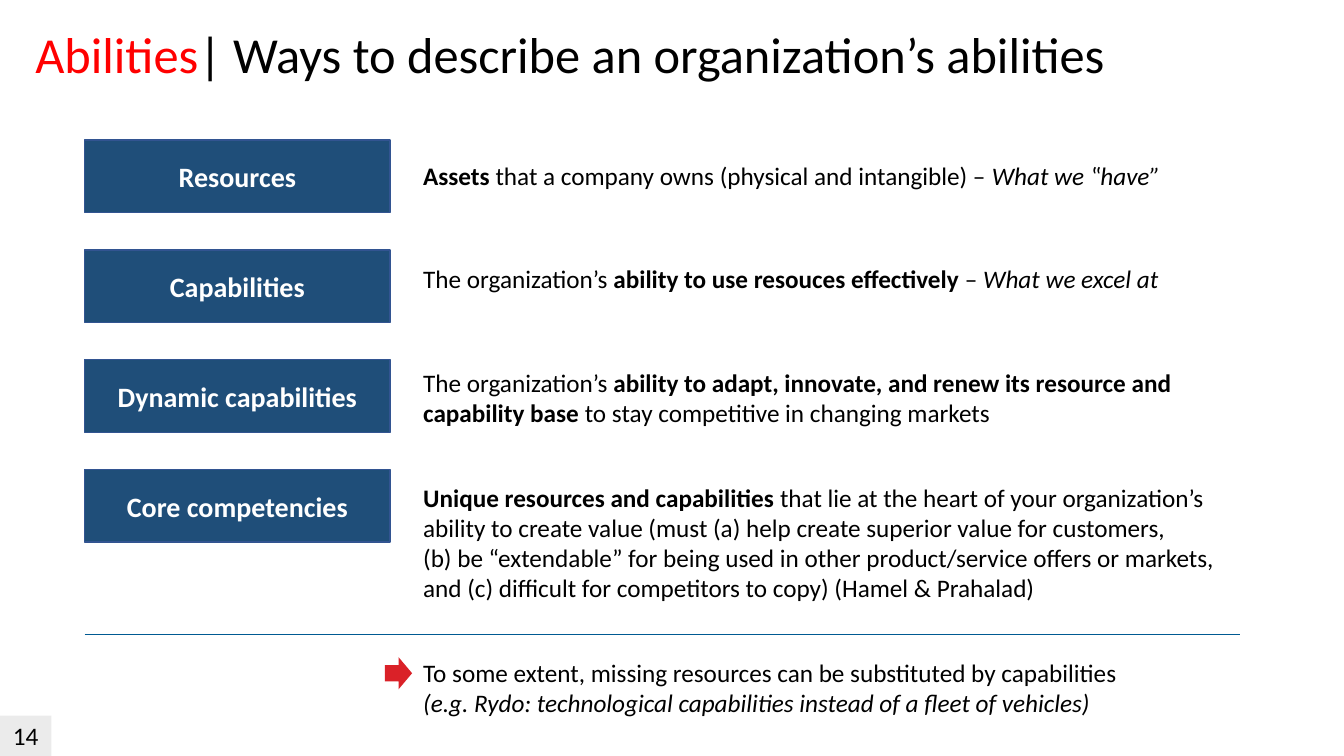
from dataclasses import dataclass

from lxml.etree import SubElement
from pptx import Presentation
from pptx.dml.color import RGBColor
from pptx.enum.shapes import MSO_CONNECTOR, MSO_SHAPE
from pptx.enum.text import MSO_ANCHOR, MSO_AUTO_SIZE, PP_ALIGN
from pptx.oxml.ns import qn
from pptx.shapes.autoshape import Shape
from pptx.shapes.shapetree import GroupShapes
from pptx.slide import Slide
from pptx.text.text import Font
from pptx.util import Pt

FONT_NAME = "Calibri"
BLACK = RGBColor(0x00, 0x00, 0x00)
WHITE = RGBColor(0xFF, 0xFF, 0xFF)
RED = RGBColor(0xFF, 0x00, 0x00)
ARROW_RED = RGBColor(0xDA, 0x21, 0x28)
BOX_BLUE = RGBColor(0x1F, 0x4E, 0x79)
BOX_BORDER = RGBColor(0x32, 0x54, 0x91)
RULE_BLUE = RGBColor(0x00, 0x5A, 0x92)
NUMBER_GREY = RGBColor(0xBF, 0xBF, 0xBF)

BOX_LEFT, BOX_TOP, BOX_WIDTH, BOX_HEIGHT = 60.5, 100, 218.2, 51.8
ROW_PITCH = 78.5
TEXT_LEFT = 295.2
RULE_RIGHT, RULE_TOP = 885.6, 452.9


@dataclass(frozen=True)
class Span:
    text: str
    bold: bool = False
    italic: bool = False


@dataclass(frozen=True)
class Description:
    top: float
    width: float
    height: float
    wrap: bool
    spans: tuple[Span, ...]


@dataclass(frozen=True)
class Ability:
    name: str
    description: Description


ABILITIES = (
    Ability("Resources", Description(110.9, 545, 28.8, False, (
        Span("Assets ", bold=True),
        Span("that a company owns (physical and intangible) – "),
        Span("What we ‟have”", italic=True),
    ))),
    Ability("Capabilities", Description(184.3, 543.6, 28.8, False, (
        Span("The organization’s "),
        Span("ability to use resouces effectively ", bold=True),
        Span("– "),
        Span("What we excel at", italic=True),
    ))),
    Ability("Dynamic capabilities", Description(258.5, 602.6, 51.1, True, (
        Span("The organization’s "),
        Span("ability to adapt, innovate, and renew its resource and capability base ", bold=True),
        Span("to stay competitive in changing markets"),
    ))),
    Ability("Core competencies", Description(340.6, 602.6, 94.3, True, (
        Span("Unique resources and capabilities", bold=True),
        Span(" that lie at the heart of your organization’s ability to create value "
             "(must (a) help create superior value for customers, \n"
             "(b) be “extendable” for being used in other product/service offers or markets, "
             "and (c) difficult for competitors to copy) (Hamel & Prahalad)"),
    ))),
)

CONCLUSION = Description(465.8, 519.8, 51.1, False, (
    Span("To some extent, missing resources can be substituted by capabilities \n"),
    Span("(e.g. Rydo: technological capabilities instead of a fleet of vehicles)", italic=True),
))


def format_font(font: Font, size: float, color: RGBColor,
                bold: bool = False, italic: bool = False) -> None:
    font.name = FONT_NAME
    font.size = Pt(size)
    font.color.rgb = color
    font.bold = bold
    font.italic = italic


def add_filled_shape(shapes: GroupShapes, kind: MSO_SHAPE, left: float, top: float,
                     width: float, height: float, fill: RGBColor) -> Shape:
    shape = shapes.add_shape(kind, Pt(left), Pt(top), Pt(width), Pt(height))
    shape.shadow.inherit = False
    shape.fill.solid()
    shape.fill.fore_color.rgb = fill
    shape.line.fill.background()
    return shape


def add_label(shape: Shape, text: str, size: float, color: RGBColor,
              anchor: MSO_ANCHOR, bold: bool = False) -> None:
    shape.text_frame.text = text
    shape.text_frame.vertical_anchor = anchor
    paragraph = shape.text_frame.paragraphs[0]
    paragraph.alignment = PP_ALIGN.CENTER
    format_font(paragraph.runs[0].font, size, color, bold)


def add_description(shapes: GroupShapes, description: Description) -> None:
    text_box = shapes.add_textbox(Pt(TEXT_LEFT), Pt(description.top),
                                  Pt(description.width), Pt(description.height))
    text_frame = text_box.text_frame
    text_frame.word_wrap = description.wrap
    text_frame.auto_size = MSO_AUTO_SIZE.SHAPE_TO_FIT_TEXT
    paragraph = text_frame.paragraphs[0]
    for span in description.spans:
        for index, line in enumerate(span.text.split("\n")):
            if index:
                paragraph.add_line_break()
            if line:
                run = paragraph.add_run()
                run.text = line
                format_font(run.font, 18, BLACK, span.bold, span.italic)


def add_title(slide: Slide) -> None:
    title = slide.shapes.title
    title.left, title.top, title.width, title.height = Pt(18), Pt(18), Pt(828), Pt(104.4)
    text_frame = title.text_frame
    text_frame.vertical_anchor = MSO_ANCHOR.TOP
    text_frame.auto_size = MSO_AUTO_SIZE.NONE
    paragraph = text_frame.paragraphs[0]
    paragraph.alignment = PP_ALIGN.LEFT
    paragraph.line_spacing = 0.9
    for text, color in (("Abilities", RED),
                        ("| Ways to describe an organization’s abilities", BLACK)):
        run = paragraph.add_run()
        run.text = text
        format_font(run.font, 36, color)


def add_slide_number(slide: Slide) -> None:
    shape = add_filled_shape(slide.shapes, MSO_SHAPE.RECTANGLE, 0, 511.2, 36.7, 28.8, NUMBER_GREY)
    color = shape.fill._xPr.find(f"{qn('a:solidFill')}/{qn('a:srgbClr')}")
    SubElement(color, qn("a:alpha"), val="30000")
    add_label(shape, "14", 18, BLACK, MSO_ANCHOR.TOP)
    shape.text_frame.word_wrap = True
    shape.text_frame.auto_size = MSO_AUTO_SIZE.SHAPE_TO_FIT_TEXT


def add_ability(slide: Slide, index: int, ability: Ability) -> None:
    shapes = slide.shapes.add_group_shape().shapes
    box = add_filled_shape(shapes, MSO_SHAPE.RECTANGLE, BOX_LEFT, BOX_TOP + index * ROW_PITCH,
                           BOX_WIDTH, BOX_HEIGHT, BOX_BLUE)
    box.line.color.rgb = BOX_BORDER
    box.line.width = Pt(1)
    add_label(box, ability.name, 20, WHITE, MSO_ANCHOR.MIDDLE, bold=True)
    add_description(shapes, ability.description)


def add_conclusion(slide: Slide) -> None:
    shapes = slide.shapes.add_group_shape().shapes
    rule = shapes.add_connector(MSO_CONNECTOR.STRAIGHT, Pt(BOX_LEFT), Pt(RULE_TOP),
                                Pt(RULE_RIGHT), Pt(RULE_TOP))
    rule.line.color.rgb = RULE_BLUE
    rule.line.width = Pt(0.5)
    SubElement(rule._element.spPr, qn("a:effectLst"))
    add_description(shapes, CONCLUSION)
    add_filled_shape(shapes, MSO_SHAPE.RIGHT_ARROW, 275, 469.4, 19.4, 23, ARROW_RED)


def main() -> None:
    presentation = Presentation()
    presentation.slide_width, presentation.slide_height = Pt(960), Pt(540)
    slide = presentation.slides.add_slide(presentation.slide_layouts.get_by_name("Title Only"))
    add_title(slide)
    add_slide_number(slide)
    for index, ability in enumerate(ABILITIES):
        add_ability(slide, index, ability)
    add_conclusion(slide)
    presentation.save("out.pptx")


if __name__ == "__main__":
    main()
